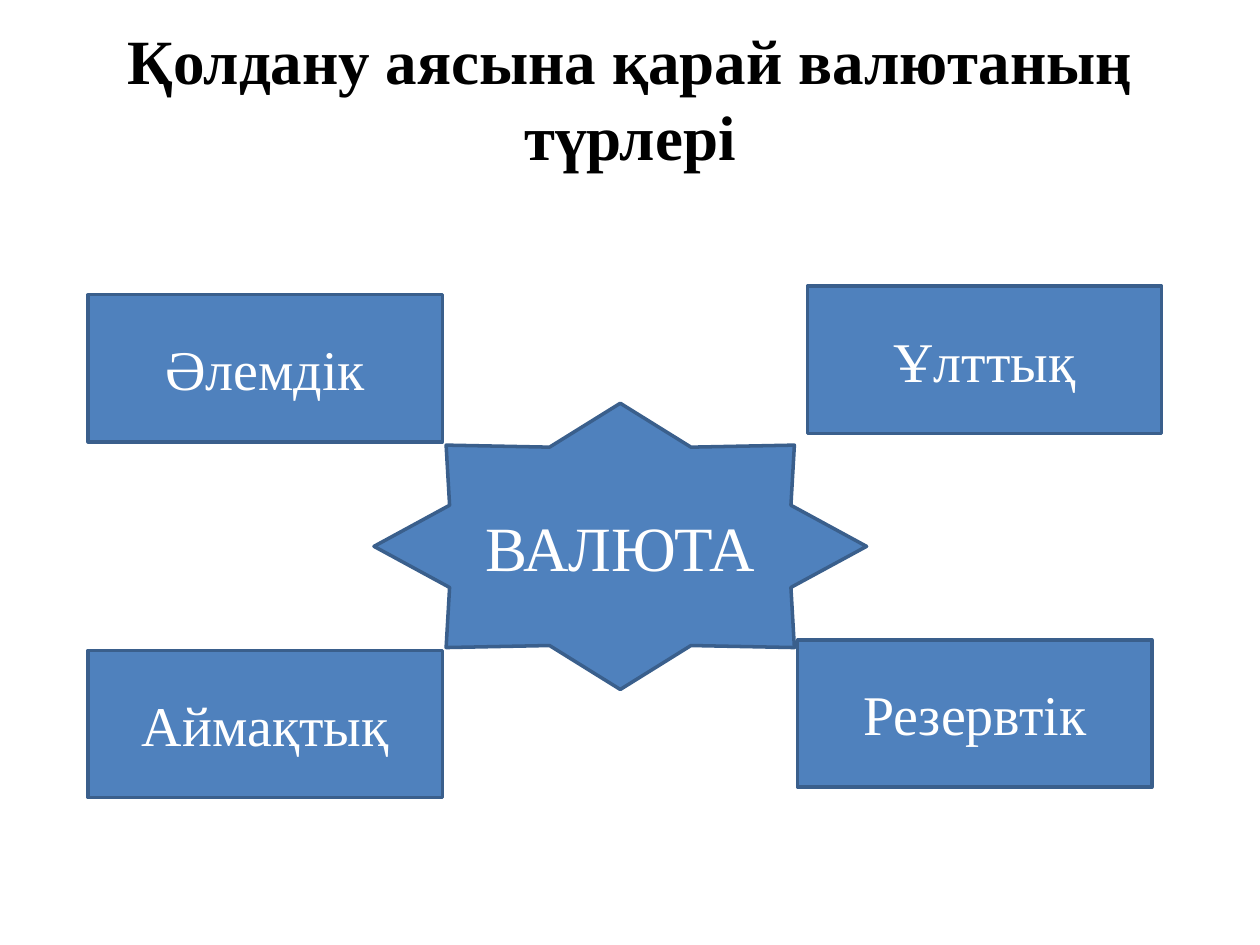
from dataclasses import dataclass

from pptx import Presentation
from pptx.dml.color import RGBColor
from pptx.enum.shapes import MSO_SHAPE as Shape
from pptx.enum.text import MSO_ANCHOR as Anchor, PP_ALIGN as Align
from pptx.util import Cm, Pt


@dataclass(frozen=True)
class Theme:
    font: str = "Times New Roman"
    title_color: RGBColor = RGBColor(0x00, 0x00, 0x00)
    label_color: RGBColor = RGBColor(0xFF, 0xFF, 0xFF)
    fill: RGBColor = RGBColor(0x4F, 0x81, 0xBD)
    outline: RGBColor = RGBColor(0x3A, 0x5F, 0x8C)
    outline_width: int = 2
    large: int = 36
    medium: int = 32


THEME = Theme()
TITLE_BOX = (1.27, 0.58, 22.86, 2.77)
DIAGRAM_ORIGIN = (1.78, 5.77)
STAR_BOX = (5.76, 2.36, 9.93, 5.77)
TYPE_SIZE = (7.14, 2.97)
# Currency types with their offsets inside the diagram, in centimetres
CURRENCY_TYPES = [
    ("Әлемдік", 0, 0.17),
    ("Ұлттық", 14.5, 0),
    ("Аймақтық", 0, 7.34),
    ("Резервтік", 14.3, 7.13),
]


def set_text(shape, text, size, color, bold=False):
    frame = shape.text_frame
    frame.text = text
    frame.word_wrap = True
    frame.vertical_anchor = Anchor.MIDDLE
    paragraph = frame.paragraphs[0]
    paragraph.alignment = Align.CENTER
    font = paragraph.runs[0].font
    font.name = THEME.font
    font.size = Pt(size)
    font.bold = bold
    font.color.rgb = color


def place_title(slide, box, text):
    title = slide.shapes.title
    title.left, title.top, title.width, title.height = map(Cm, box)
    set_text(title, text, THEME.large, THEME.title_color, bold=True)


def add_label_shape(slide, kind, box, text, size):
    shape = slide.shapes.add_shape(kind, *map(Cm, box))
    shape.shadow.inherit = False
    shape.fill.solid()
    shape.fill.fore_color.rgb = THEME.fill
    shape.line.color.rgb = THEME.outline
    shape.line.width = Pt(THEME.outline_width)
    set_text(shape, text, size, THEME.label_color)


def add_currency_diagram(slide, left, top):
    """Place the central star and the currency types around it."""
    x, y, width, height = STAR_BOX
    add_label_shape(slide, Shape.STAR_8_POINT, (left + x, top + y, width, height),
                    "ВАЛЮТА", THEME.large)
    for name, x, y in CURRENCY_TYPES:
        add_label_shape(slide, Shape.RECTANGLE, (left + x, top + y, *TYPE_SIZE),
                        name, THEME.medium)


def main():
    presentation = Presentation()
    presentation.slide_width = Cm(25.4)
    presentation.slide_height = Cm(19.05)
    title_only = presentation.slide_layouts[5]
    slide = presentation.slides.add_slide(title_only)
    place_title(slide, TITLE_BOX, "Қолдану аясына қарай валютаның түрлері")
    add_currency_diagram(slide, *DIAGRAM_ORIGIN)
    presentation.save("out.pptx")


if __name__ == "__main__":
    main()
